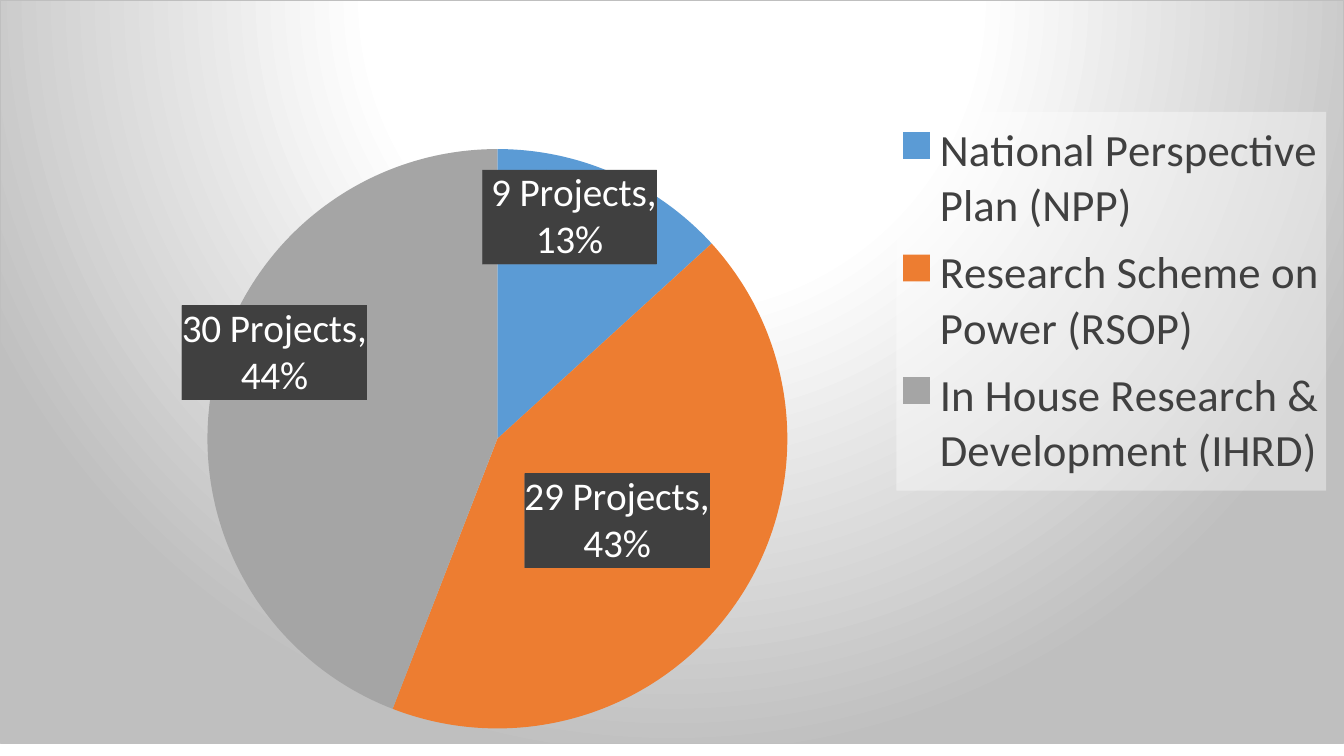
from dataclasses import dataclass

from lxml import etree
from pptx import Presentation
from pptx.chart.data import CategoryChartData
from pptx.dml.color import RGBColor
from pptx.enum.chart import XL_CHART_TYPE, XL_LABEL_POSITION, XL_LEGEND_POSITION
from pptx.oxml import parse_xml
from pptx.oxml.ns import nsdecls, qn
from pptx.util import Inches, Pt

PIE = XL_CHART_TYPE.PIE
CENTER = XL_LABEL_POSITION.CENTER
RIGHT = XL_LEGEND_POSITION.RIGHT

SLIDE_WIDTH, SLIDE_HEIGHT = 13.33, 7.5
CHART_HEIGHT = 7.38
PLOT_SHARE = {"x": 0.15, "y": 0.2, "w": 0.44, "h": 0.78}
LEGEND_SHARE = {"x": 0.67, "y": 0.15, "w": 0.32, "h": 0.51}

SLICES = [
    ("National Perspective Plan (NPP)", 9, "5B9BD5",
     [" 9 Projects,", "13%"], {"x": 0.01, "y": -0.12}),
    ("Research Scheme on Power (RSOP)", 29, "ED7D31",
     ["29 Projects,", "43%"], {"x": 0, "y": 0}),
    ("In House Research & Development (IHRD)", 30, "A5A5A5",
     ["30 Projects,", "44%"], {"x": -0.06, "y": -0.08}),
]


@dataclass(frozen=True)
class Theme:
    font: str = "Calibri"
    label_size: int = 28
    legend_size: int = 32
    label_text: str = "FFFFFF"
    legend_text: str = "404040"
    light: str = "FFFFFF"
    shade: str = "BFBFBF"
    label_dark: str = "404040"
    label_stripe: str = "595959"


THEME = Theme()


def format_font(font, size, color, bold=False):
    font.name = THEME.font
    font.size = Pt(size)
    font.bold = bold
    font.color.rgb = RGBColor.from_string(color)


def write_lines(frame, lines, size, color):
    for index, line in enumerate(lines):
        para = frame.paragraphs[0] if index == 0 else frame.add_paragraph()
        span = para.add_run()
        span.text = line
        format_font(span.font, size, color)


def color_xml(color, alpha=None):
    opacity = f'<a:alpha val="{alpha * 1000}"/>' if alpha else ""
    return f'<a:srgbClr val="{color}">{opacity}</a:srgbClr>'


def shape_properties(content):
    return parse_xml(f'<c:spPr {nsdecls("c", "a")}>{content}</c:spPr>')


def set_layout(parent, after, shares, inner=False):
    for old in parent.findall(qn("c:layout")):
        parent.remove(old)
    layout = etree.Element(qn("c:layout"))
    manual = etree.SubElement(layout, qn("c:manualLayout"))
    if inner:
        etree.SubElement(manual, qn("c:layoutTarget")).set("val", "inner")
    if "w" in shares:
        for axis in "xy":
            etree.SubElement(manual, qn(f"c:{axis}Mode")).set("val", "edge")
    for key, share in shares.items():
        etree.SubElement(manual, qn(f"c:{key}")).set("val", str(share))
    if after is None:
        parent.insert(0, layout)
    else:
        parent.find(qn(after)).addnext(layout)


def style_background(chart):
    stops = "".join(
        f'<a:gs pos="{share * 1000}">{color_xml(color)}</a:gs>'
        for share, color in [(0, THEME.light), (39, THEME.light), (100, THEME.shade)]
    )
    fill = (
        f'<a:gradFill><a:gsLst>{stops}</a:gsLst><a:path path="circle">'
        '<a:fillToRect l="50000" t="-80000" r="50000" b="180000"/>'
        "</a:path></a:gradFill>"
    )
    line = f'<a:ln w="{Pt(0.75)}"><a:solidFill>{color_xml(THEME.shade)}</a:solidFill></a:ln>'
    chart.element.find(qn("c:chart")).addnext(shape_properties(fill + line))


def style_legend(chart):
    chart.has_legend = True
    legend = chart.legend
    legend.position = RIGHT
    legend.include_in_layout = False
    format_font(legend.font, THEME.legend_size, THEME.legend_text)
    element = legend._element
    set_layout(element, "c:legendPos", LEGEND_SHARE)
    fill = f"<a:solidFill>{color_xml(THEME.light, 39)}</a:solidFill>"
    element.find(qn("c:overlay")).addnext(shape_properties(fill))


def style_labels(series):
    labels = series.data_labels
    labels.show_value = True
    labels.show_percentage = True
    labels.position = CENTER
    format_font(labels.font, THEME.label_size, THEME.label_text, bold=True)


def style_slice(point, color, lines, offset):
    point.format.fill.solid()
    point.format.fill.fore_color.rgb = RGBColor.from_string(color)
    label = point.data_label
    write_lines(label.text_frame, lines, THEME.label_size, THEME.label_text)
    label.position = CENTER
    element = label._dLbl
    set_layout(element, "c:idx", offset)
    pattern = (
        f'<a:pattFill prst="dkVert"><a:fgClr>{color_xml(THEME.label_dark)}</a:fgClr>'
        f"<a:bgClr>{color_xml(THEME.label_stripe)}</a:bgClr></a:pattFill>"
    )
    for old in element.findall(qn("c:spPr")):
        element.remove(old)
    element.find(qn("c:tx")).addnext(shape_properties(pattern))
    element.find(qn("c:showPercent")).set("val", "1")


def add_project_pie(page):
    data = CategoryChartData()
    data.categories = [name for name, *_ in SLICES]
    data.add_series("Series 1", [count for _, count, *_ in SLICES])
    chart = page.shapes.add_chart(
        PIE, 0, 0, Inches(SLIDE_WIDTH), Inches(CHART_HEIGHT), data
    ).chart
    chart.has_title = False
    chart.font.name = THEME.font
    chart.font.size = Pt(10)
    chart.plots[0].vary_by_categories = True
    style_background(chart)
    style_legend(chart)
    set_layout(chart.element.find(".//" + qn("c:plotArea")), None, PLOT_SHARE, inner=True)
    series = chart.plots[0].series[0]
    style_labels(series)
    for index, (_, _, color, lines, offset) in enumerate(SLICES):
        style_slice(series.points[index], color, lines, offset)


def main():
    deck = Presentation()
    deck.slide_width, deck.slide_height = Inches(SLIDE_WIDTH), Inches(SLIDE_HEIGHT)
    page = deck.slides.add_slide(deck.slide_layouts[6])
    add_project_pie(page)
    deck.save("out.pptx")


if __name__ == "__main__":
    main()
